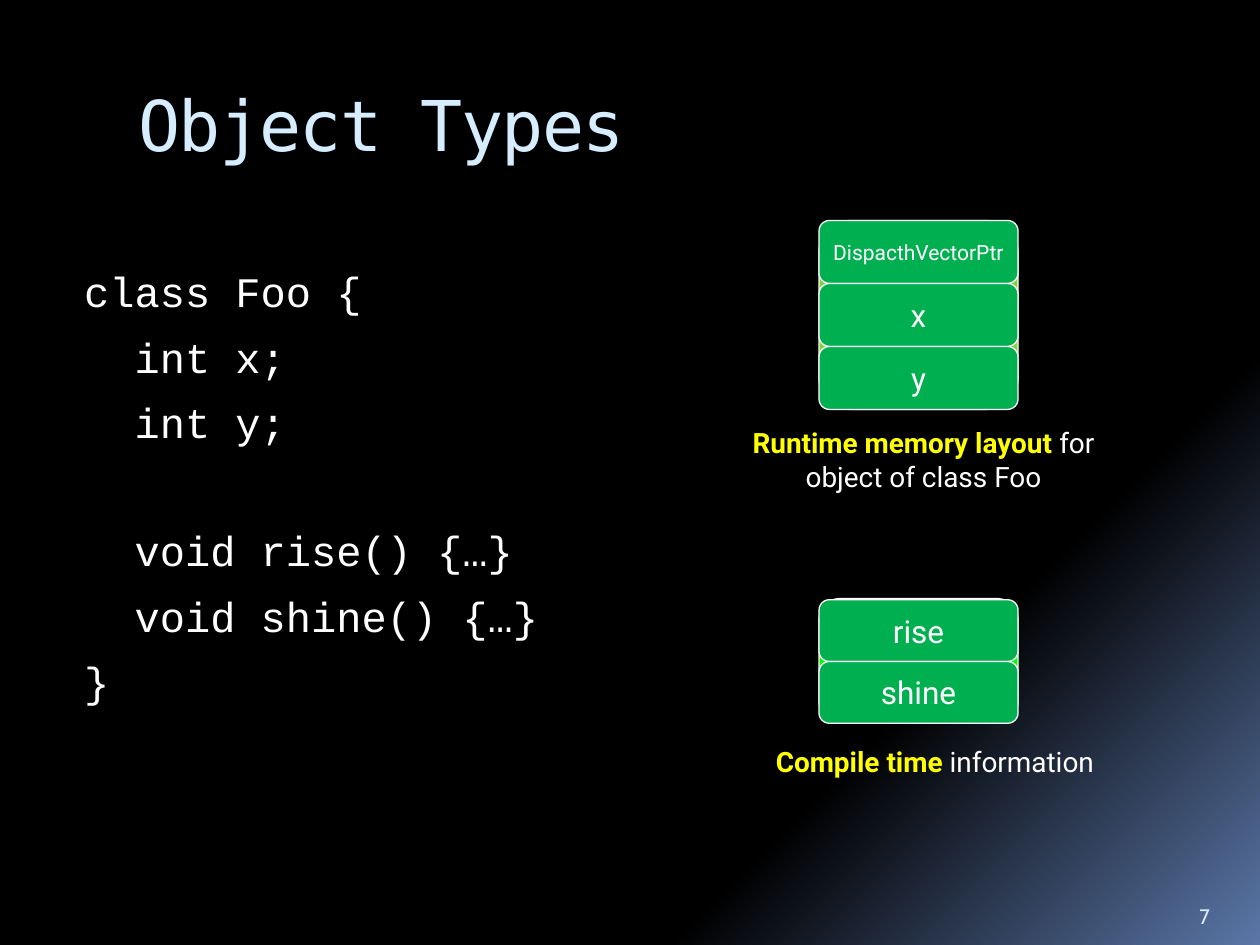
import pptx
import pptx.util
import pptx.dml.color
import pptx.enum.shapes
import pptx.enum.text

Inches = pptx.util.Inches
Pt = pptx.util.Pt
RGBColor = pptx.dml.color.RGBColor
ALIGN = pptx.enum.text.PP_ALIGN
ANCHOR = pptx.enum.text.MSO_ANCHOR

COLORS = {
    "black": "000000",
    "corner": "5B77A8",
    "pale": "D6ECFF",
    "white": "FFFFFF",
    "yellow": "FFFF00",
    "cell": "00B050",
    "layout_back": "7FD13B",
    "dispatch_back": "00FF00",
}


def add_run(paragraph, text, *, font, size, color="white", bold=False, spacing=None):
    run = paragraph.add_run()
    run.text = text
    run.font.name = font
    run.font.size = Pt(size)
    run.font.bold = bold
    run.font.color.rgb = RGBColor.from_string(COLORS[color])
    if spacing is not None:
        run.font._element.set("spc", str(spacing))


def add_box(left, top, width, height, *, fill=None, anchor=ANCHOR.TOP, wrap=True):
    """Add a filled rounded rectangle, or a text box when there is no fill."""
    place = [Inches(value) for value in (left, top, width, height)]
    if fill is None:
        shape = slide.shapes.add_textbox(*place)
    else:
        rounded = pptx.enum.shapes.MSO_SHAPE.ROUNDED_RECTANGLE
        shape = slide.shapes.add_shape(rounded, *place)
        shape.shadow.inherit = False
        shape.fill.solid()
        shape.fill.fore_color.rgb = RGBColor.from_string(COLORS[fill])
        shape.line.color.rgb = RGBColor.from_string(COLORS["white"])
        shape.line.width = Pt(0.75)
    shape.text_frame.word_wrap = wrap
    shape.text_frame.vertical_anchor = anchor
    return shape


presentation = pptx.Presentation()
presentation.slide_width = Inches(10)
presentation.slide_height = Inches(7.5)
slide = presentation.slides.add_slide(presentation.slide_layouts[6])

# Background: black, turning blue towards the lower right corner
background = slide.background.fill
background.gradient()
background.gradient_angle = 315
for stop, (position, color) in zip(
    background.gradient_stops, [(0.73, "black"), (1, "corner")]
):
    stop.position = position
    stop.color.rgb = RGBColor.from_string(COLORS[color])

# Slide number and title
number = add_box(9.42, 7.02, 0.5, 0.4, anchor=ANCHOR.BOTTOM)
add_run(number.text_frame.paragraphs[0], "7", font="Cabin", size=12, color="pale")
title = add_box(1, 0.6, 8.5, 1)
add_run(title.text_frame.paragraphs[0], "Object Types",
        font="DejaVu Sans Mono", size=40, color="pale", spacing=-100)

# Code: text, indent level, space before in points
code_lines = [
    ("class Foo {", 0, 7),
    ("int x;", 1, 8.6),
    ("int y;", 1, 8.6),
    ("void rise() {…}", 1, 44.4),
    ("void shine() {…}", 1, 8.6),
    ("}", 0, 8.6),
]
code = add_box(0.5, 2.06, 4.75, 4.56).text_frame
for index, (text, level, space) in enumerate(code_lines):
    paragraph = code.add_paragraph() if index else code.paragraphs[0]
    paragraph.space_before = Pt(space)
    paragraph._p.get_or_add_pPr().set("marL", str(Inches(0.07 + 0.4 * level)))
    add_run(paragraph, text, font="Courier New", size=24)

# Stacks of cells: back colour, back top and height, first cell top, cell height, cells
stacks = [
    ("layout_back", 1.75, 1.5, 1.75, 0.5,
     [("DispacthVectorPtr", 12), ("x", 18), ("y", 18)]),
    ("dispatch_back", 4.75, 0.99, 4.76, 0.49, [("rise", 18), ("shine", 18)]),
]
for back, back_top, back_height, top, height, cells in stacks:
    add_box(6.5, back_top, 1.58, back_height, fill=back)
    for row, (text, size) in enumerate(cells):
        cell = add_box(6.5, top + row * height, 1.58, height,
                       fill="cell", anchor=ANCHOR.MIDDLE, wrap=False)
        paragraph = cell.text_frame.paragraphs[0]
        paragraph.alignment = ALIGN.CENTER
        add_run(paragraph, text, font="Roboto", size=size)

# Captions under the stacks
captions = [
    (5.58, 3.33, 0.64, "Runtime memory layout ", "for object of class Foo"),
    (5.67, 5.86, 0.37, "Compile time ", "information"),
]
for left, top, height, key_words, rest in captions:
    paragraph = add_box(left, top, 3.5, height).text_frame.paragraphs[0]
    paragraph.alignment = ALIGN.CENTER
    add_run(paragraph, key_words, font="Roboto", size=16, color="yellow", bold=True)
    add_run(paragraph, rest, font="Roboto", size=16)

presentation.save("out.pptx")
